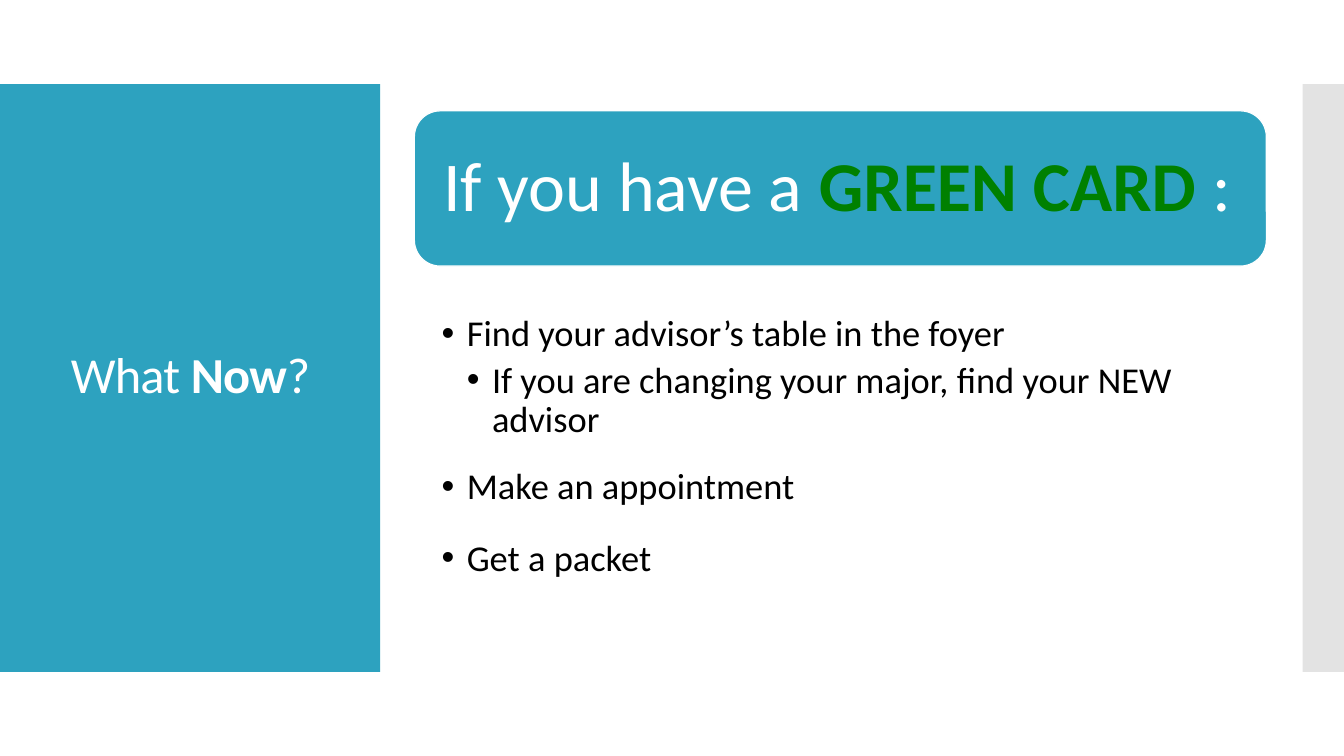
import dataclasses

import lxml.etree
import pptx
import pptx.dml.color
import pptx.enum.shapes
import pptx.enum.text
import pptx.oxml.ns
import pptx.util


@dataclasses.dataclass(frozen=True)
class Theme:
    font: str = "Calibri"
    teal: str = "2DA2BF"
    gray: str = "C8C8C8"
    white: str = "FFFFFF"
    green: str = "008000"
    black: str = "000000"
    title_size: int = 36
    card_size: int = 50
    body_size: int = 26
    line_spacing: float = 0.9
    indent: float = 0.25


class AdvisingSlide:
    """Draw styled elements placed by shares of the slide's size."""

    def __init__(self, presentation, theme):
        self.theme = theme
        self.width = presentation.slide_width
        self.height = presentation.slide_height
        self.slide = presentation.slides.add_slide(presentation.slide_layouts[5])

    def box(self, left, top, width, height):
        return (round(left * self.width), round(top * self.height),
                round(width * self.width), round(height * self.height))

    def color(self, value):
        return pptx.dml.color.RGBColor.from_string(value)

    def panel(self, area, fill, kind="RECTANGLE", outline=None, opacity=None):
        shape_type = getattr(pptx.enum.shapes.MSO_SHAPE, kind)
        shape = self.slide.shapes.add_shape(shape_type, *self.box(*area))
        shape.shadow.inherit = False
        shape.fill.solid()
        shape.fill.fore_color.rgb = self.color(fill)
        if outline:
            shape.line.color.rgb = self.color(outline)
            shape.line.width = pptx.util.Pt(0.85)
        else:
            shape.line.fill.background()
        if opacity is not None:
            color_tag = pptx.oxml.ns.qn("a:srgbClr")
            color_element = next(shape.element.spPr.iter(color_tag))
            alpha = lxml.etree.SubElement(color_element, pptx.oxml.ns.qn("a:alpha"))
            alpha.set("val", str(round(opacity * 100000)))
        return shape

    def frame(self, shape, insets, anchor):
        text_frame = shape.text_frame
        text_frame.word_wrap = True
        text_frame.auto_size = pptx.enum.text.MSO_AUTO_SIZE.NONE
        text_frame.vertical_anchor = anchor
        (text_frame.margin_left, text_frame.margin_top,
         text_frame.margin_right, text_frame.margin_bottom) = map(pptx.util.Inches, insets)
        return text_frame

    def add_runs(self, paragraph, runs, size, align=pptx.enum.text.PP_ALIGN.LEFT, tracking=None):
        paragraph.alignment = align
        paragraph.line_spacing = self.theme.line_spacing
        for text, color, bold in runs:
            run = paragraph.add_run()
            run.text = text
            run.font.name = self.theme.font
            run.font.size = pptx.util.Pt(size)
            run.font.bold = bold
            run.font.color.rgb = self.color(color)
            if tracking is not None:
                run._r.get_or_add_rPr().set("spc", str(round(tracking * 100)))

    def title(self, area, runs):
        title = self.slide.shapes.title
        title.left, title.top, title.width, title.height = self.box(*area)
        title.element.getparent().append(title.element)
        text_frame = self.frame(title, (0.1, 0.05, 0.1, 0.05), pptx.enum.text.MSO_ANCHOR.MIDDLE)
        self.add_runs(text_frame.paragraphs[0], runs, self.theme.title_size,
                      pptx.enum.text.PP_ALIGN.CENTER, -0.6)

    def card(self, area, runs):
        shape = self.panel(area, self.theme.teal, "ROUNDED_RECTANGLE", self.theme.white)
        text_frame = self.frame(shape, (0.21,) * 4, pptx.enum.text.MSO_ANCHOR.MIDDLE)
        self.add_runs(text_frame.paragraphs[0], runs, self.theme.card_size)

    def bullets(self, area, items):
        shape = self.slide.shapes.add_textbox(*self.box(*area))
        text_frame = self.frame(shape, (0.27, 0.49, 0.09, 0.02), pptx.enum.text.MSO_ANCHOR.TOP)
        indent = pptx.util.Inches(self.theme.indent)
        for index, (level, text, space_after) in enumerate(items):
            paragraph = text_frame.add_paragraph() if index else text_frame.paragraphs[0]
            self.add_runs(paragraph, [(text, self.theme.black, False)], self.theme.body_size)
            paragraph.level = level
            paragraph.space_after = pptx.util.Pt(space_after)
            properties = paragraph._p.get_or_add_pPr()
            properties.set("marL", str(indent * (level + 1)))
            properties.set("indent", str(-indent))
            for tag, key, value in (("a:buFont", "typeface", "Arial"), ("a:buChar", "char", "•")):
                bullet = lxml.etree.SubElement(properties, pptx.oxml.ns.qn(tag))
                bullet.set(key, value)


def main():
    presentation = pptx.Presentation()
    presentation.slide_width = pptx.util.Inches(13.33)
    presentation.slide_height = pptx.util.Inches(7.5)
    theme = Theme()
    advising = AdvisingSlide(presentation, theme)
    band_top, band_height = 1 / 9, 7 / 9
    content_left, content_width = 4.11 / 13.33, 8.45 / 13.33
    card_top, card_height = 1.1 / 7.5, 1.54 / 7.5

    advising.panel((0, band_top, 3.77 / 13.33, band_height), theme.teal)
    advising.panel((12.92 / 13.33, band_top, 0.41 / 13.33, band_height), theme.gray, opacity=0.5)
    advising.title((0.28 / 13.33, 1.23 / 7.5, 3.22 / 13.33, 5.03 / 7.5), [
        ("What ", theme.white, False),
        ("Now", theme.white, True),
        ("?", theme.white, False),
    ])
    advising.card((content_left, card_top, content_width, card_height), [
        ("If you have a ", theme.white, False),
        ("GREEN CARD ", theme.green, True),
        (":", theme.white, False),
    ])
    advising.bullets((content_left, card_top + card_height, content_width, 3.77 / 7.5), [
        (0, "Find your advisor’s table in the foyer", 5),
        (1, "If you are changing your major, find your NEW advisor", 20),
        (0, "Make an appointment", 23),
        (0, "Get a packet", 5),
    ])
    presentation.save("out.pptx")


if __name__ == "__main__":
    main()
